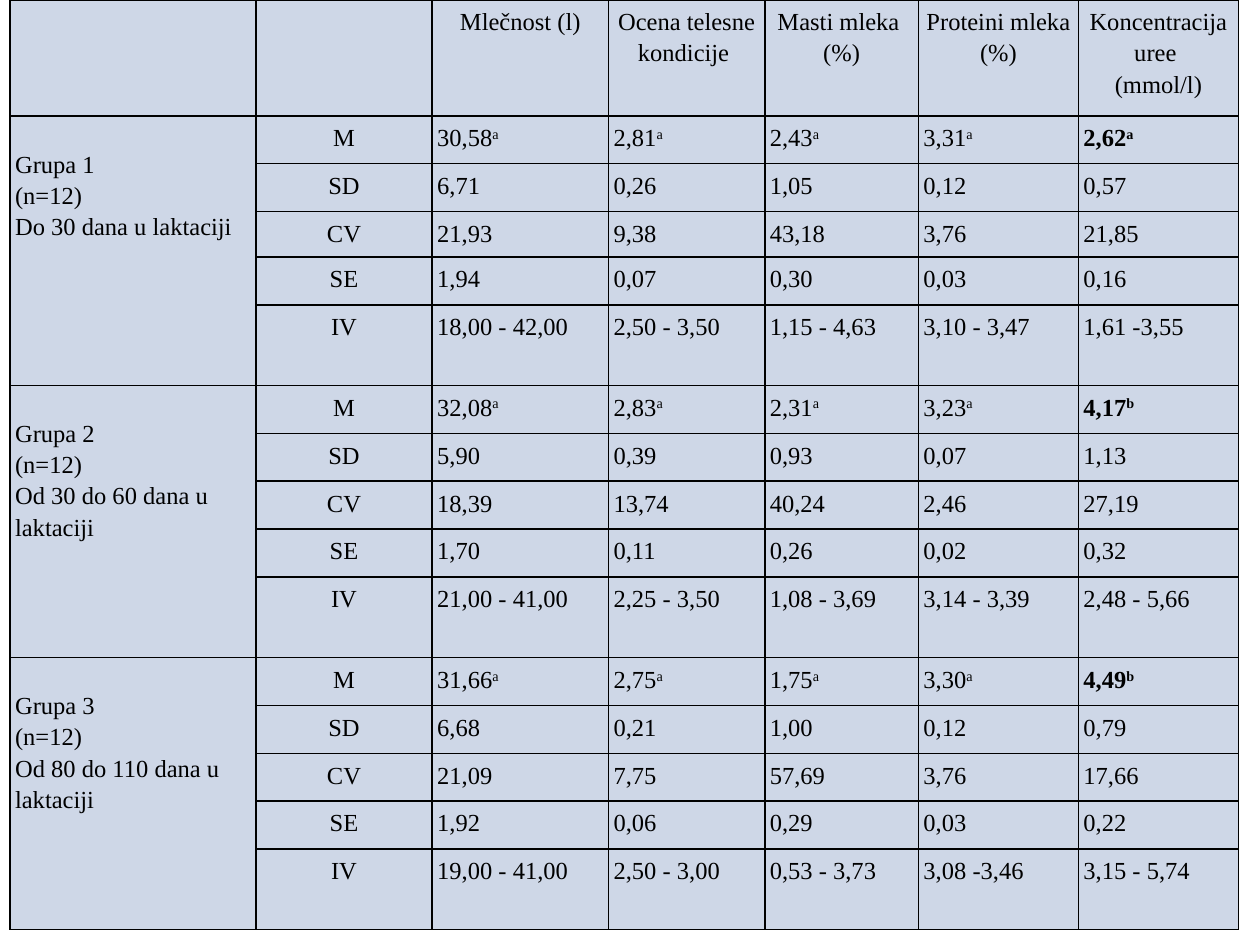
import dataclasses

import pptx
import pptx.dml.color
import pptx.enum.text
import pptx.oxml
import pptx.oxml.ns
import pptx.table
import pptx.util

Inches = pptx.util.Inches
Align = pptx.enum.text.PP_ALIGN

COLORS = {"fill": "CED7E7", "ink": "000000"}
FONT = "Times New Roman"
WIDTHS = [1.95, 1.4, 1.4, 1.24, 1.22, 1.27, 1.27]
HEAD = 0.92
ROW = 0.38
LAST = 0.64
PAD = 0.04
DROP = 0.25
STATS = ["M", "SD", "CV", "SE", "IV"]


@dataclasses.dataclass
class Line:
    text: str
    align: Align
    mark: str = ""
    bold: bool = False


@dataclasses.dataclass
class Group:
    name: str
    days: str
    align: Align
    rows: list[list[str]]
    marks: str


HEADS = [
    ["Mlečnost (l)"],
    ["Ocena telesne kondicije "],
    ["Masti mleka ", "(%)"],
    ["Proteini mleka ", "(%)"],
    ["Koncentracija uree ", "(mmol/l)"],
]

GROUPS = [
    Group("Grupa 1 ", "Do 30 dana u laktaciji", Align.JUSTIFY, [
        ["30,58", "2,81", "2,43", "3,31", "2,62"],
        ["6,71", "0,26", "1,05", "0,12", "0,57"],
        ["21,93", "9,38", "43,18", "3,76", "21,85"],
        ["1,94", "0,07", "0,30", "0,03", "0,16"],
        ["18,00 - 42,00", "2,50 - 3,50", "1,15 - 4,63", "3,10 - 3,47", "1,61 -3,55"],
    ], "aaaaa"),
    Group("Grupa 2", "Od 30 do 60 dana u laktaciji", Align.LEFT, [
        ["32,08", "2,83", "2,31", "3,23", "4,17"],
        ["5,90", "0,39", "0,93", "0,07", "1,13"],
        ["18,39", "13,74", "40,24", "2,46", "27,19"],
        ["1,70", "0,11", "0,26", "0,02", "0,32"],
        ["21,00 - 41,00", "2,25 - 3,50", "1,08 - 3,69", "3,14 - 3,39", "2,48 - 5,66"],
    ], "aaaab"),
    Group("Grupa 3 ", "Od 80 do 110 dana u laktaciji", Align.LEFT, [
        ["31,66", "2,75", "1,75", "3,30", "4,49"],
        ["6,68", "0,21", "1,00", "0,12", "0,79"],
        ["21,09", "7,75", "57,69", "3,76", "17,66"],
        ["1,92", "0,06", "0,29", "0,03", "0,22"],
        ["19,00 - 41,00", "2,50 - 3,00", "0,53 - 3,73", "3,08 -3,46", "3,15 - 5,74"],
    ], "aaaab"),
]


def style_cell(cell: pptx.table._Cell) -> None:
    cell.margin_left = cell.margin_right = Inches(PAD)
    cell.margin_top = cell.margin_bottom = Inches(PAD)
    props = cell._tc.get_or_add_tcPr()
    for side in ("lnL", "lnR", "lnT", "lnB"):
        props.append(pptx.oxml.parse_xml(
            f'<a:{side} {pptx.oxml.ns.nsdecls("a")} w="{pptx.util.Pt(1)}">'
            f'<a:solidFill><a:srgbClr val="{COLORS["ink"]}"/></a:solidFill>'
            f'</a:{side}>'
        ))
    cell.fill.solid()
    cell.fill.fore_color.rgb = pptx.dml.color.RGBColor.from_string(COLORS["fill"])


def write_cell(cell: pptx.table._Cell, lines: list[Line]) -> None:
    frame = cell.text_frame
    frame.text = "\n".join(line.text for line in lines)
    for para, line in zip(frame.paragraphs, lines):
        para.alignment = line.align
        para.line_spacing = 1.15
        if line.mark:
            mark = para.add_run()
            mark.text = line.mark
            mark.font._element.set("baseline", "30000")
        for run in para.runs:
            run.font.name = FONT
            run.font.size = pptx.util.Pt(14)
            run.font.bold = line.bold
            run.font.color.rgb = pptx.dml.color.RGBColor.from_string(COLORS["ink"])


def write_group(table: pptx.table.Table, top: int, group: Group) -> None:
    title = table.cell(top, 0)
    title.merge(table.cell(top + len(STATS) - 1, 0))
    write_cell(title, [
        Line(group.name, Align.JUSTIFY),
        Line("(n=12)", Align.JUSTIFY),
        Line(group.days, group.align),
    ])
    title.margin_top = Inches(DROP)
    for row, (stat, values) in enumerate(zip(STATS, group.rows), top):
        write_cell(table.cell(row, 1), [Line(stat, Align.CENTER)])
        marks = group.marks if stat == "M" else [""] * len(values)
        for col, (value, mark) in enumerate(zip(values, marks), 2):
            bold = stat == "M" and col == len(WIDTHS) - 1
            write_cell(table.cell(row, col), [Line(value, Align.JUSTIFY, mark, bold)])


def main() -> None:
    deck = pptx.Presentation()
    deck.slide_width, deck.slide_height = Inches(10), Inches(7.5)
    slide = deck.slides.add_slide(deck.slide_layouts[6])

    heights = [HEAD] + ([ROW] * (len(STATS) - 1) + [LAST]) * len(GROUPS)
    heights[3] = 0.36
    shape = slide.shapes.add_table(
        len(heights), len(WIDTHS), Inches(0.08), Inches(0), Inches(9.75), Inches(7.42)
    )
    table = shape.table
    table.first_row = table.horz_banding = False
    for col, width in zip(table.columns, WIDTHS):
        col.width = Inches(width)
    for row, height in zip(table.rows, heights):
        row.height = Inches(height)
    shape.height = Inches(7.42)

    for cell in table.iter_cells():
        style_cell(cell)
    for col, words in enumerate(HEADS, 2):
        write_cell(table.cell(0, col), [Line(word, Align.CENTER) for word in words])
    for place, group in enumerate(GROUPS):
        write_group(table, 1 + place * len(STATS), group)

    deck.save("out.pptx")


if __name__ == "__main__":
    main()
